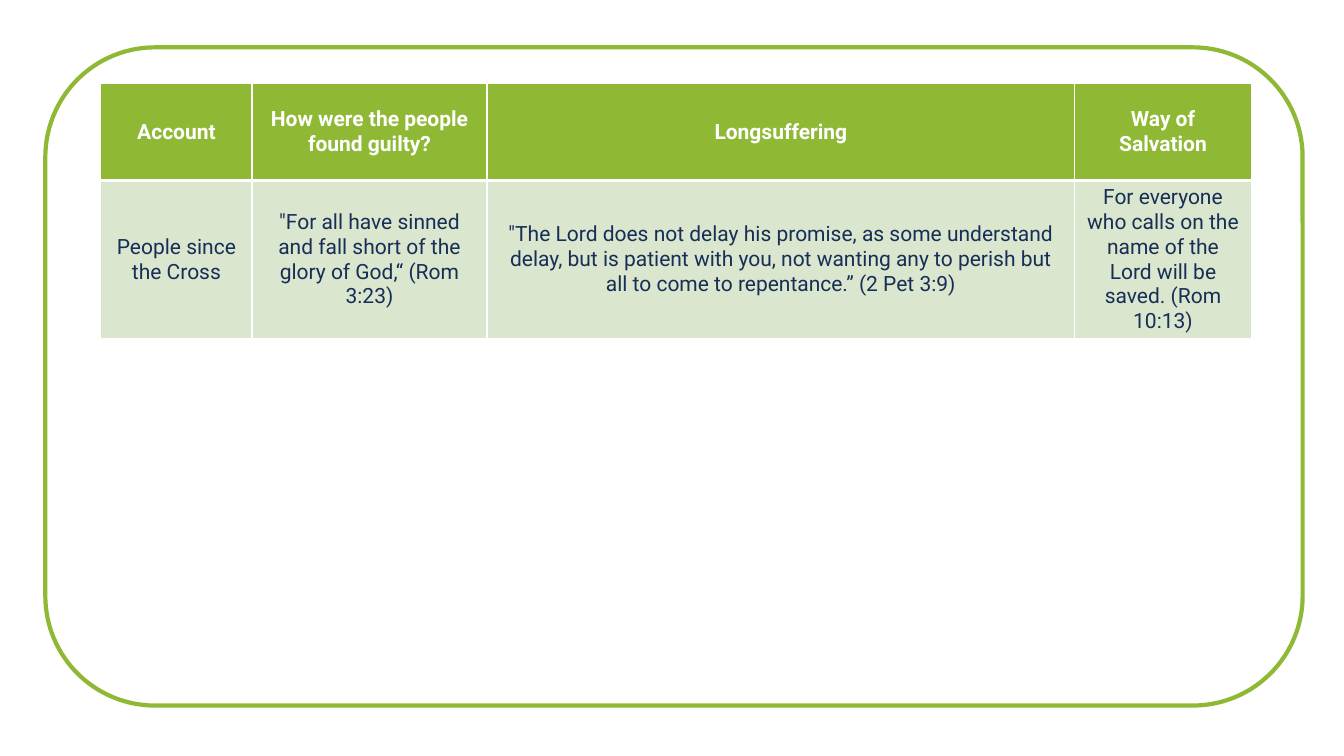
from dataclasses import dataclass

from lxml.etree import SubElement
from pptx import Presentation
from pptx.dml.color import RGBColor
from pptx.enum.shapes import MSO_SHAPE
from pptx.enum.text import MSO_ANCHOR, PP_ALIGN
from pptx.oxml.ns import qn
from pptx.table import _Cell
from pptx.util import Inches, Pt

COLORS = {"green": "8FB935", "pale": "DBE6CE", "navy": "172E56", "white": "FFFFFF"}
FONT = "Roboto"
COLUMN_WIDTHS = [1.5, 2.33, 5.83, 1.75]


@dataclass
class TableRow:
    height: float
    fill: str
    color: str
    bold: bool
    spacing: int
    bottom_border: int
    texts: list[str]


ROWS = [
    TableRow(0.96, "green", "white", True, 0, 3, [
        "Account",
        "How were the people found guilty?",
        "Longsuffering",
        "Way of Salvation",
    ]),
    TableRow(1.09, "pale", "navy", False, 6, 1, [
        "People since the Cross",
        "\"For all have sinned and fall short of the glory of God,“ (Rom 3:23)",
        "\"The Lord does not delay his promise, as some understand delay, but is "
        "patient with you, not wanting any to perish but all to come to "
        "repentance.” (2 Pet 3:9)",
        "For everyone who calls on the name of the Lord will be saved. (Rom 10:13)",
    ]),
]


def rgb(name: str) -> RGBColor:
    return RGBColor.from_string(COLORS[name])


def set_borders(cell: _Cell, bottom: int, top: int) -> None:
    tcPr = cell._tc.get_or_add_tcPr()
    widths = {"a:lnL": 1, "a:lnR": 1, "a:lnT": top, "a:lnB": bottom}
    for tag, width in widths.items():
        ln = SubElement(tcPr, qn(tag), w=str(Pt(width)))
        fill = SubElement(ln, qn("a:solidFill"))
        SubElement(fill, qn("a:srgbClr"), val=COLORS["white"])


def fill_cell(cell: _Cell, text: str, row: TableRow, top_border: int) -> None:
    # Borders must precede the fill in the cell properties
    set_borders(cell, row.bottom_border, top_border)
    cell.fill.solid()
    cell.fill.fore_color.rgb = rgb(row.fill)
    cell.vertical_anchor = MSO_ANCHOR.MIDDLE
    cell.text = text
    p = cell.text_frame.paragraphs[0]
    p.alignment = PP_ALIGN.CENTER
    p.space_before = p.space_after = Pt(row.spacing)
    p.font.name = FONT
    p.font.size = Pt(15)
    p.font.bold = row.bold
    p.font.color.rgb = rgb(row.color)


def main() -> None:
    prs = Presentation()
    prs.slide_width, prs.slide_height = Inches(13.33), Inches(7.5)
    s = prs.slides.add_slide(prs.slide_layouts[6])

    # Rounded frame
    sp = s.shapes.add_shape(MSO_SHAPE.ROUNDED_RECTANGLE, Inches(0.45), Inches(0.47),
                            Inches(12.47), Inches(6.53))
    sp.shadow.inherit = False
    sp.fill.background()
    sp.line.color.rgb = rgb("green")
    sp.line.width = Pt(3)

    # Table of accounts
    table = s.shapes.add_table(len(ROWS), len(COLUMN_WIDTHS), Inches(1), Inches(0.83),
                               Inches(sum(COLUMN_WIDTHS)),
                               Inches(sum(row.height for row in ROWS))).table
    for column, width in zip(table.columns, COLUMN_WIDTHS):
        column.width = Inches(width)
    top_border = 1
    for i, row in enumerate(ROWS):
        table.rows[i].height = Inches(row.height)
        for j, text in enumerate(row.texts):
            fill_cell(table.cell(i, j), text, row, top_border)
        top_border = row.bottom_border

    prs.save("out.pptx")


if __name__ == "__main__":
    main()
